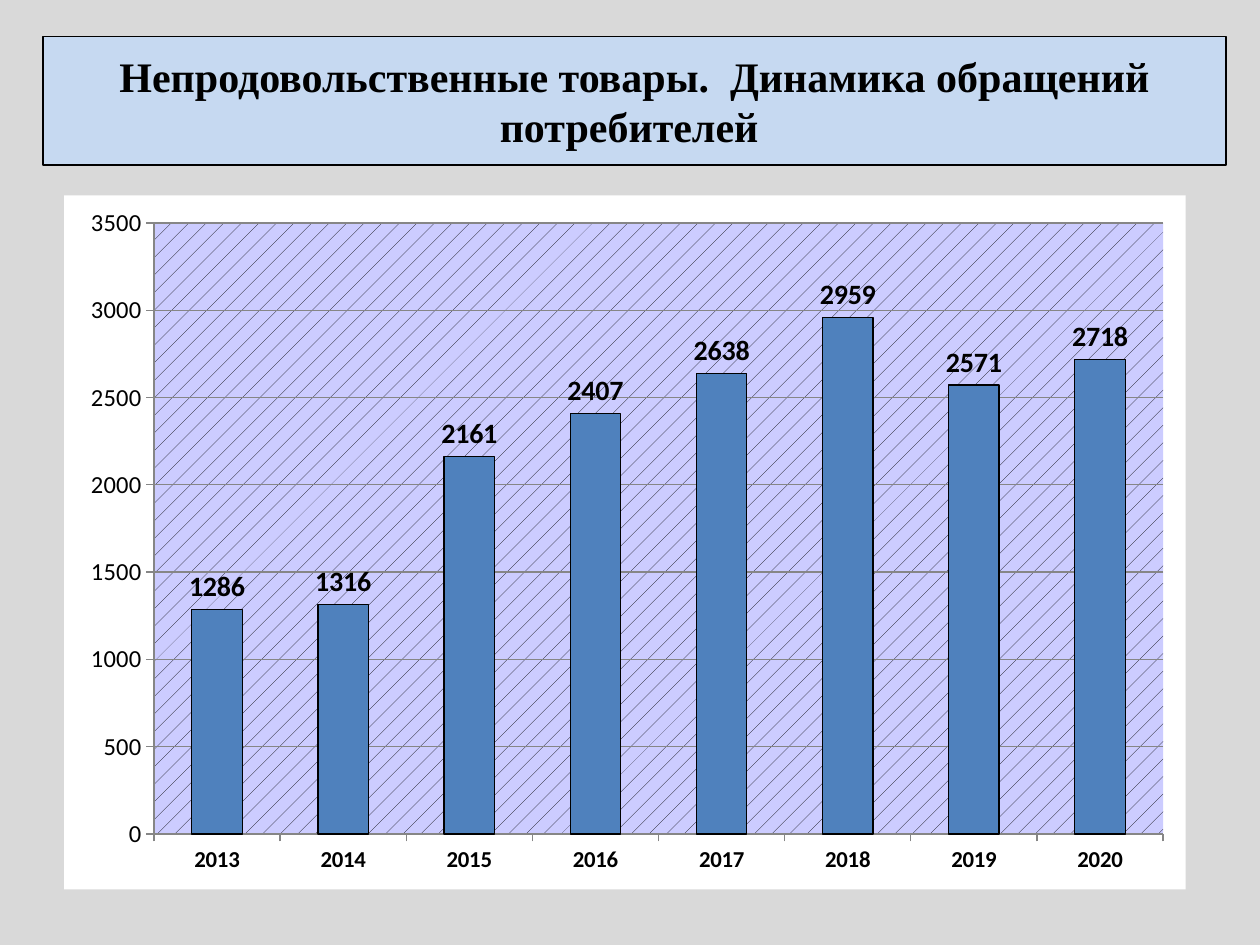
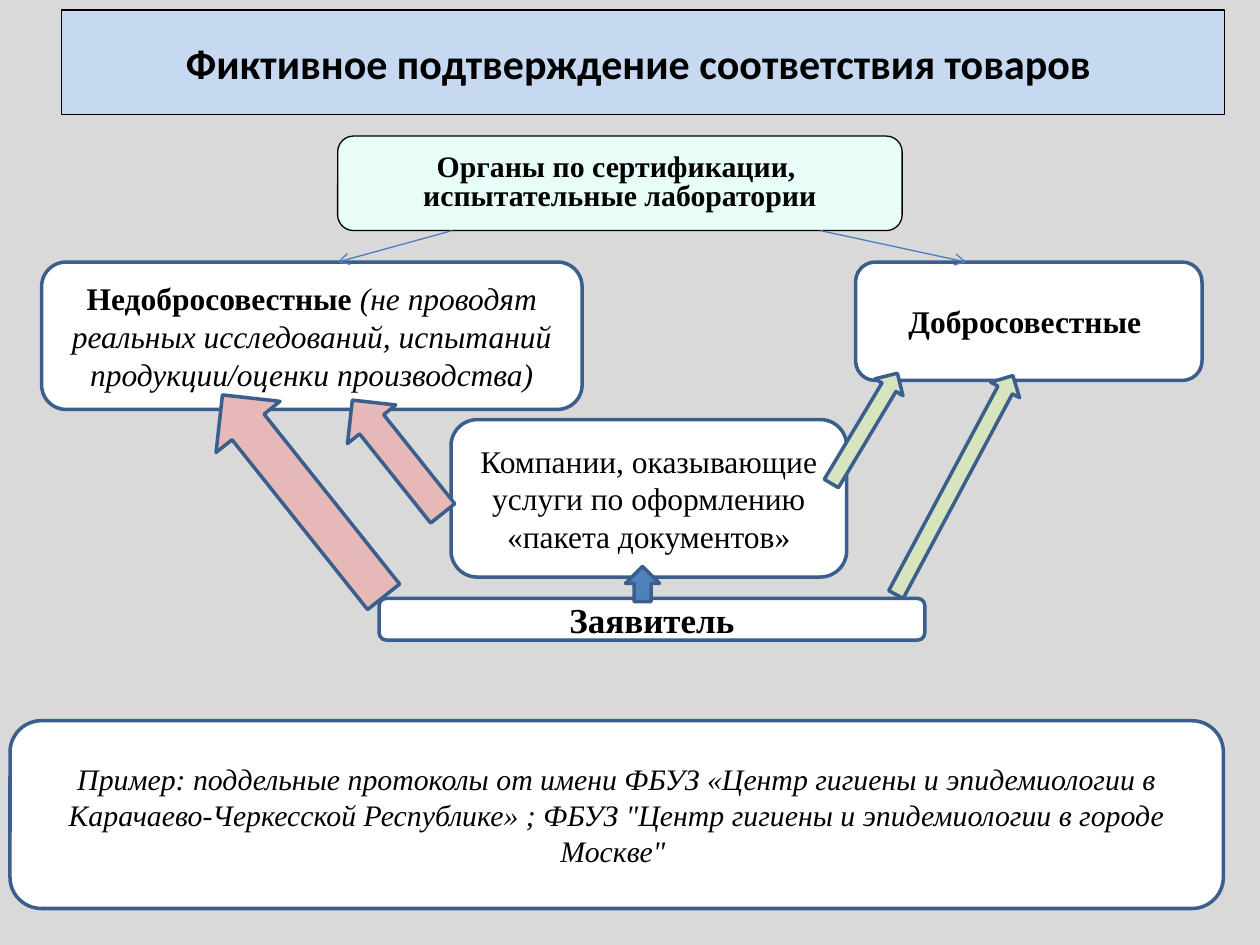
from dataclasses import dataclass

import pptx
import pptx.chart.data
import pptx.dml.color
import pptx.enum.chart
import pptx.enum.shapes
import pptx.enum.text
import pptx.oxml
import pptx.oxml.ns
import pptx.util

# Shared look: 100 px to the inch
SCALE = 9144
TIMES, SANS = "Times New Roman", "Calibri"
HUES = {
    "page": "D9D9D9", "band": "C6D9F1", "ink": "000000", "paper": "FFFFFF",
    "mint": "E9FDF8", "edge": "3A5F8C", "link": "4B7EBC", "blue": "4F81BD",
    "rose": "E6B9B8", "lime": "D7E4BD", "plot": "CCCCFF", "grid": "868686",
}
KINDS = pptx.enum.shapes.MSO_SHAPE
SPACE = pptx.oxml.ns.nsdecls("a", "c")


@dataclass
class Run:
    text: str
    bold: bool = False
    slant: bool = False


@dataclass
class Area:
    left: int
    top: int
    width: int
    height: int

    def emu(self) -> list[int]:
        return [px(n) for n in (self.left, self.top, self.width, self.height)]


@dataclass
class Box:
    area: Area
    size: int
    lines: list[list[Run]]
    fill: str = "paper"
    edge: str = "edge"
    weight: float = 2
    lead: float = 1


@dataclass
class Arrow:
    area: Area
    turn: float
    fill: str


@dataclass
class Link:
    start: tuple[int, int]
    end: tuple[int, int]


def px(count: int) -> int:
    return count * SCALE


def hue(name: str) -> pptx.dml.color.RGBColor:
    return pptx.dml.color.RGBColor.from_string(HUES[name])


def node(xml: str):
    """Parse an XML fragment whose first tag holds a {ns} slot."""
    return pptx.oxml.parse_xml(xml.replace("{ns}", SPACE))


def style(font, face: str, size: float, bold: bool = False) -> None:
    font.name, font.size, font.bold = face, pptx.util.Pt(size), bold
    font.color.rgb = hue("ink")


def paint(item, fill: str, edge: str, weight: float) -> None:
    item.fill.solid()
    item.fill.fore_color.rgb = hue(fill)
    item.line.color.rgb = hue(edge)
    item.line.width = pptx.util.Pt(weight)


def write(frame, lines: list[list[Run]], face: str, size: int, lead: float = 1) -> None:
    frame.word_wrap = True
    frame.auto_size = pptx.enum.text.MSO_AUTO_SIZE.NONE
    frame.vertical_anchor = pptx.enum.text.MSO_ANCHOR.MIDDLE
    for i, line in enumerate(lines):
        para = frame.add_paragraph() if i else frame.paragraphs[0]
        para.alignment = pptx.enum.text.PP_ALIGN.CENTER
        para.line_spacing = lead
        for part in line:
            run = para.add_run()
            run.text = part.text
            style(run.font, face, size, part.bold)
            run.font.italic = part.slant


def add_page(deck, title: str, area: Area, face: str):
    """Start a slide with its title band."""
    page = deck.slides.add_slide(deck.slide_layouts.get_by_name("Title Only"))
    band = page.shapes.title
    band.left, band.top, band.width, band.height = area.emu()
    paint(band, "band", "ink", 0.75)
    write(band.text_frame, [[Run(title, bold=True)]], face, 24)
    return page


def add_box(page, box: Box) -> None:
    shape = page.shapes.add_shape(KINDS.ROUNDED_RECTANGLE, *box.area.emu())
    shape.shadow.inherit = False
    paint(shape, box.fill, box.edge, box.weight)
    write(shape.text_frame, box.lines, TIMES, box.size, box.lead)


def add_arrow(page, arrow: Arrow) -> None:
    shape = page.shapes.add_shape(KINDS.RIGHT_ARROW, *arrow.area.emu())
    shape.shadow.inherit = False
    shape.rotation = arrow.turn
    paint(shape, arrow.fill, "edge", 2)


def add_link(page, link: Link) -> None:
    ends = [px(n) for n in (*link.start, *link.end)]
    line = page.shapes.add_connector(pptx.enum.shapes.MSO_CONNECTOR.STRAIGHT, *ends)
    line.line.color.rgb = hue("link")
    line.line.width = pptx.util.Pt(0.75)
    line.line._get_or_add_ln().append(node('<a:tailEnd {ns} type="arrow"/>'))
    line._element.spPr.append(node("<a:effectLst {ns}/>"))


def fill_chart(chart) -> None:
    """Place the plot area and give it a hatch, on a white chart."""
    root = chart._chartSpace
    plot = root.chart.plotArea
    for old in plot.findall(pptx.oxml.ns.qn("c:layout")):
        plot.remove(old)
    spots = {"x": 0.08, "y": 0.04, "w": 0.9, "h": 0.88}
    modes = '<c:xMode val="edge"/><c:yMode val="edge"/>'
    sizes = "".join(f'<c:{key} val="{val}"/>' for key, val in spots.items())
    plot.insert(0, node('<c:layout {ns}><c:manualLayout><c:layoutTarget val="inner"/>'
                        + modes + sizes + "</c:manualLayout></c:layout>"))
    tone = '<a:srgbClr val="%s"/>'
    plot.append(node('<c:spPr {ns}><a:pattFill prst="pct5"><a:fgClr>' + tone % HUES["ink"]
                     + "</a:fgClr><a:bgClr>" + tone % HUES["plot"]
                     + "</a:bgClr></a:pattFill></c:spPr>"))
    root.chart.addnext(node("<c:spPr {ns}><a:solidFill>" + tone % HUES["paper"]
                            + "</a:solidFill><a:ln><a:noFill/></a:ln></c:spPr>"))


def add_bars(page, area: Area, counts: dict[str, int]) -> None:
    data = pptx.chart.data.CategoryChartData()
    data.categories = list(counts)
    data.add_series("Series 1", list(counts.values()))
    kind = pptx.enum.chart.XL_CHART_TYPE.COLUMN_CLUSTERED
    chart = page.shapes.add_chart(kind, *area.emu(), data).chart
    chart.has_title = chart.has_legend = False
    style(chart.font, SANS, 10)

    # Axes
    years, scale = chart.category_axis, chart.value_axis
    style(years.tick_labels.font, SANS, 13, True)
    style(scale.tick_labels.font, SANS, 14)
    scale.minimum_scale, scale.maximum_scale, scale.major_unit = 0, 3500, 500
    scale.has_major_gridlines = True
    for rule in (years.format, scale.format, scale.major_gridlines.format):
        rule.line.color.rgb = hue("grid")
        rule.line.width = pptx.util.Pt(0.75)
    for axis in (years, scale):
        axis.major_tick_mark = pptx.enum.chart.XL_TICK_MARK.OUTSIDE

    # Bars and their labels
    bars = chart.plots[0]
    bars.gap_width, bars.vary_by_categories = 150, False
    paint(bars.series[0].format, "blue", "ink", 0.75)
    bars.has_data_labels = True
    bars.data_labels.show_value = True
    bars.data_labels.position = pptx.enum.chart.XL_LABEL_POSITION.OUTSIDE_END
    style(bars.data_labels.font, SANS, 16, True)
    fill_chart(chart)


# Content
COUNTS = dict(zip(map(str, range(2013, 2021)),
                  (1286, 1316, 2161, 2407, 2638, 2959, 2571, 2718)))

BOXES = [
    Box(Area(268, 108, 448, 75), 17,
        [[Run("Органы по сертификации, ", bold=True)],
         [Run("испытательные лаборатории", bold=True)]],
        "mint", "ink", 0.75, 0.8),
    Box(Area(679, 208, 275, 94), 18, [[Run("Добросовестные ", bold=True)]]),
    Box(Area(33, 208, 429, 117), 18,
        [[Run("Недобросовестные ", bold=True),
          Run("(не проводят реальных исследований, испытаний "
              "продукции/оценки производства)", slant=True)]]),
    Box(Area(301, 475, 433, 33), 20, [[Run("Заявитель", bold=True)]]),
    Box(Area(358, 333, 314, 125), 18,
        [[Run("Компании, оказывающие услуги по оформлению «пакета документов»")]]),
    Box(Area(8, 572, 963, 149), 17,
        [[Run("Пример: поддельные протоколы от имени ФБУЗ «Центр гигиены и "
              "эпидемиологии в Карачаево-Черкесской Республике» ; ФБУЗ \"Центр "
              "гигиены и эпидемиологии в городе Москве\" ", slant=True)]]),
]

LINKS = [Link((359, 183), (268, 208)), Link((651, 183), (767, 208))]

ARROWS = [
    Arrow(Area(496, 450, 28, 27), 270, "blue"),
    Arrow(Area(138, 361, 205, 65), 231.4, "rose"),
    Arrow(Area(659, 372, 197, 26), 298.1, "lime"),
    Arrow(Area(258, 338, 115, 49), 231.4, "rose"),
    Arrow(Area(635, 327, 102, 26), 300.9, "lime"),
]


def main() -> None:
    deck = pptx.Presentation()
    deck.slide_width, deck.slide_height = px(1000), px(750)
    back = deck.slide_master.background.fill
    back.solid()
    back.fore_color.rgb = hue("page")

    # Slide 1: yearly appeals
    page = add_page(deck, "Непродовольственные товары.  Динамика обращений потребителей ",
                    Area(34, 29, 939, 102), TIMES)
    add_bars(page, Area(51, 155, 890, 551), COUNTS)

    # Slide 2: scheme of false certification
    page = add_page(deck, "Фиктивное подтверждение соответствия товаров ",
                    Area(49, 8, 923, 83), SANS)
    for box in BOXES:
        add_box(page, box)
    for link in LINKS:
        add_link(page, link)
    for arrow in ARROWS:
        add_arrow(page, arrow)

    deck.save("out.pptx")


if __name__ == "__main__":
    main()
